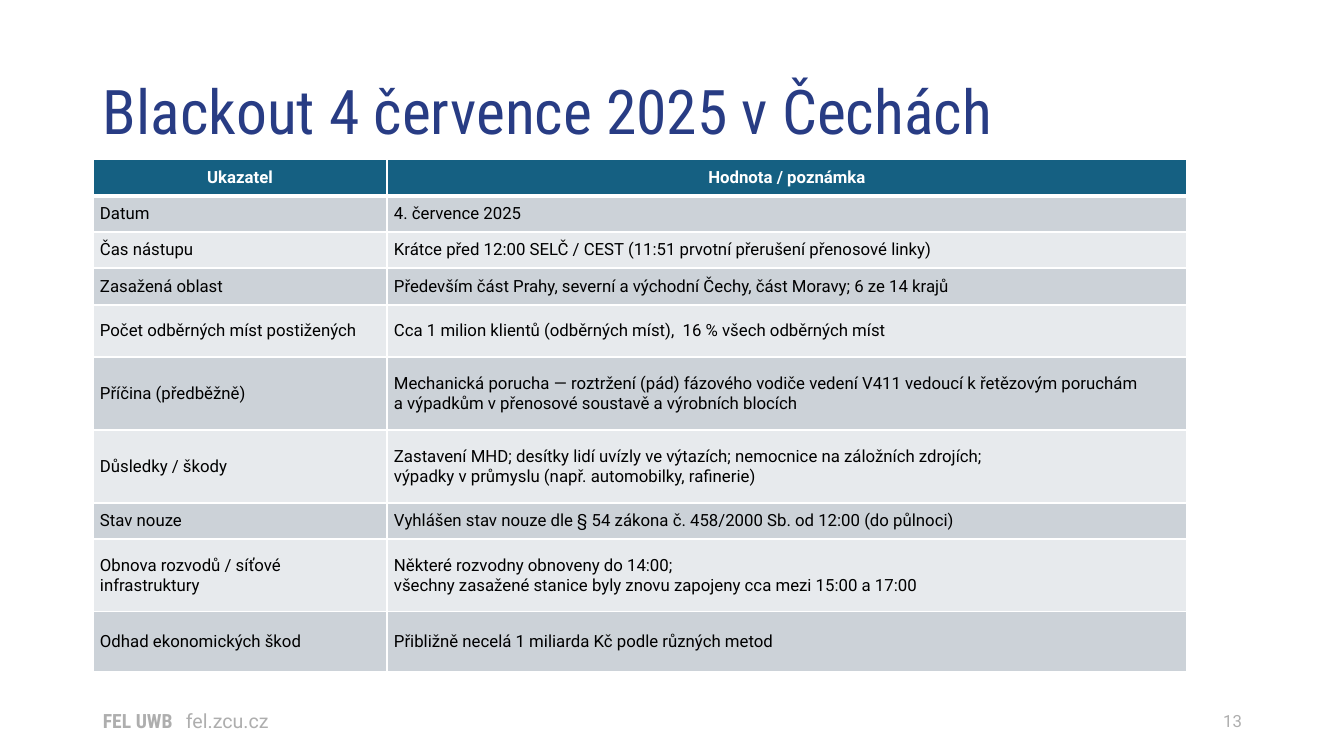
from dataclasses import dataclass

from lxml.etree import SubElement
from pptx import Presentation
from pptx.dml.color import RGBColor
from pptx.enum.text import MSO_ANCHOR as Anchor, PP_ALIGN as Align
from pptx.oxml.ns import qn
from pptx.util import Inches, Pt

EMU_PER_PX = Inches(1) / 100.8


@dataclass(frozen=True)
class Theme:
    navy: str = "283C84"
    header: str = "156082"
    bands: tuple = ("CCD2D8", "E7EAED")
    white: str = "FFFFFF"
    black: str = "000000"
    grey: str = "AEAEAE"
    body_font: str = "Roboto"
    narrow_font: str = "Roboto Condensed"
    title_size: int = 44
    footer_size: int = 14
    body_size: int = 12
    rule: int = 1
    header_rule: int = 3


def px(length):
    return round(length * EMU_PER_PX)


def write(paragraph, text, *, font, size, color, bold=False, align=Align.LEFT):
    paragraph.alignment = align
    for index, line in enumerate(text.split("\n")):
        if index:
            paragraph.add_line_break()
        run = paragraph.add_run()
        run.text = line
        run.font.name = font
        run.font.size = Pt(size)
        run.font.bold = bold
        run.font.color.rgb = RGBColor.from_string(color)


class SlideBuilder:
    def __init__(self, slide, theme):
        self.slide = slide
        self.theme = theme

    def text_box(self, left, top, width, height, anchor=Anchor.MIDDLE):
        frame = self.slide.shapes.add_textbox(*map(px, (left, top, width, height))).text_frame
        frame.word_wrap = True
        frame.vertical_anchor = anchor
        return frame.paragraphs[0]

    def tab_stop(self, paragraph, position):
        stops = SubElement(paragraph._p.get_or_add_pPr(), qn("a:tabLst"))
        SubElement(stops, qn("a:tab"), pos=str(px(position)), algn="l")

    def cell_borders(self, cell, top, bottom):
        rule = self.theme.rule
        properties = cell._tc.get_or_add_tcPr()
        for side, width in (("L", rule), ("R", rule), ("T", top), ("B", bottom)):
            line = SubElement(properties, qn(f"a:ln{side}"), w=str(Pt(width)))
            fill = SubElement(line, qn("a:solidFill"))
            SubElement(fill, qn("a:srgbClr"), val=self.theme.white)

    def table(self, left, top, widths, heights, rows):
        theme = self.theme
        grid = self.slide.shapes.add_table(
            len(rows), len(widths), px(left), px(top), px(sum(widths)), px(sum(heights))
        ).table
        grid.horz_banding = False
        for column, width in zip(grid.columns, widths):
            column.width = px(width)
        for number, (row, height, texts) in enumerate(zip(grid.rows, heights, rows)):
            row.height = px(height)
            is_header = number == 0
            for cell, text in zip(row.cells, texts):
                cell.vertical_anchor = Anchor.MIDDLE
                cell.margin_left = cell.margin_right = px(7)
                cell.margin_top = cell.margin_bottom = 0
                self.cell_borders(
                    cell,
                    top=theme.header_rule if number == 1 else theme.rule,
                    bottom=theme.header_rule if is_header else theme.rule,
                )
                fill = theme.header if is_header else theme.bands[(number - 1) % 2]
                cell.fill.solid()
                cell.fill.fore_color.rgb = RGBColor.from_string(fill)
                write(
                    cell.text_frame.paragraphs[0],
                    text,
                    font=theme.body_font,
                    size=theme.body_size,
                    color=theme.white if is_header else theme.black,
                    bold=is_header,
                    align=Align.CENTER if is_header else Align.LEFT,
                )


BLACKOUT_FACTS = [
    ("Ukazatel", "Hodnota / poznámka"),
    ("Datum", "4. července 2025"),
    ("Čas nástupu", "Krátce před 12:00 SELČ / CEST (11:51 prvotní přerušení přenosové linky)"),
    ("Zasažená oblast", "Především část Prahy, severní a východní Čechy, část Moravy; 6 ze 14 krajů"),
    ("Počet odběrných míst postižených", "Cca 1 milion klientů (odběrných míst),  16 % všech odběrných míst"),
    (
        "Příčina (předběžně)",
        "Mechanická porucha — roztržení (pád) fázového vodiče vedení V411 vedoucí k řetězovým poruchám\n"
        "a výpadkům v přenosové soustavě a výrobních blocích",
    ),
    (
        "Důsledky / škody",
        "Zastavení MHD; desítky lidí uvízly ve výtazích; nemocnice na záložních zdrojích;\n"
        "výpadky v průmyslu (např. automobilky, rafinerie)",
    ),
    ("Stav nouze", "Vyhlášen stav nouze dle § 54 zákona č. 458/2000 Sb. od 12:00 (do půlnoci)"),
    (
        "Obnova rozvodů / síťové infrastruktury",
        "Některé rozvodny obnoveny do 14:00;\n"
        "všechny zasažené stanice byly znovu zapojeny cca mezi 15:00 a 17:00",
    ),
    ("Odhad ekonomických škod", "Přibližně necelá 1 miliarda Kč podle různých metod"),
]
ROW_HEIGHTS = [37, 36, 36, 37, 52, 73, 73, 36, 73, 60]


def main():
    deck = Presentation()
    deck.slide_width, deck.slide_height = px(1344), px(756)
    theme = Theme()
    builder = SlideBuilder(deck.slides.add_slide(deck.slide_layouts[6]), theme)

    page_number = builder.text_box(950, 701, 302, 40)
    write(page_number, "13", font=theme.body_font, size=theme.body_size, color=theme.grey, align=Align.RIGHT)

    footer = builder.text_box(93, 701, 644, 40)
    builder.tab_stop(footer, 83)
    footer_style = {"size": theme.footer_size, "color": theme.grey}
    write(footer, "FEL UWB\t", font=theme.narrow_font, bold=True, **footer_style)
    write(footer, "fel.zcu.cz", font=theme.body_font, **footer_style)

    title = builder.text_box(93, 76, 1231, 96, anchor=Anchor.TOP)
    title.line_spacing = 0.9
    write(
        title,
        "Blackout 4 července 2025 v Čechách",
        font=theme.narrow_font,
        size=theme.title_size,
        color=theme.navy,
    )

    builder.table(93, 159, [294, 800], ROW_HEIGHTS, BLACKOUT_FACTS)
    deck.save("out.pptx")


if __name__ == "__main__":
    main()
